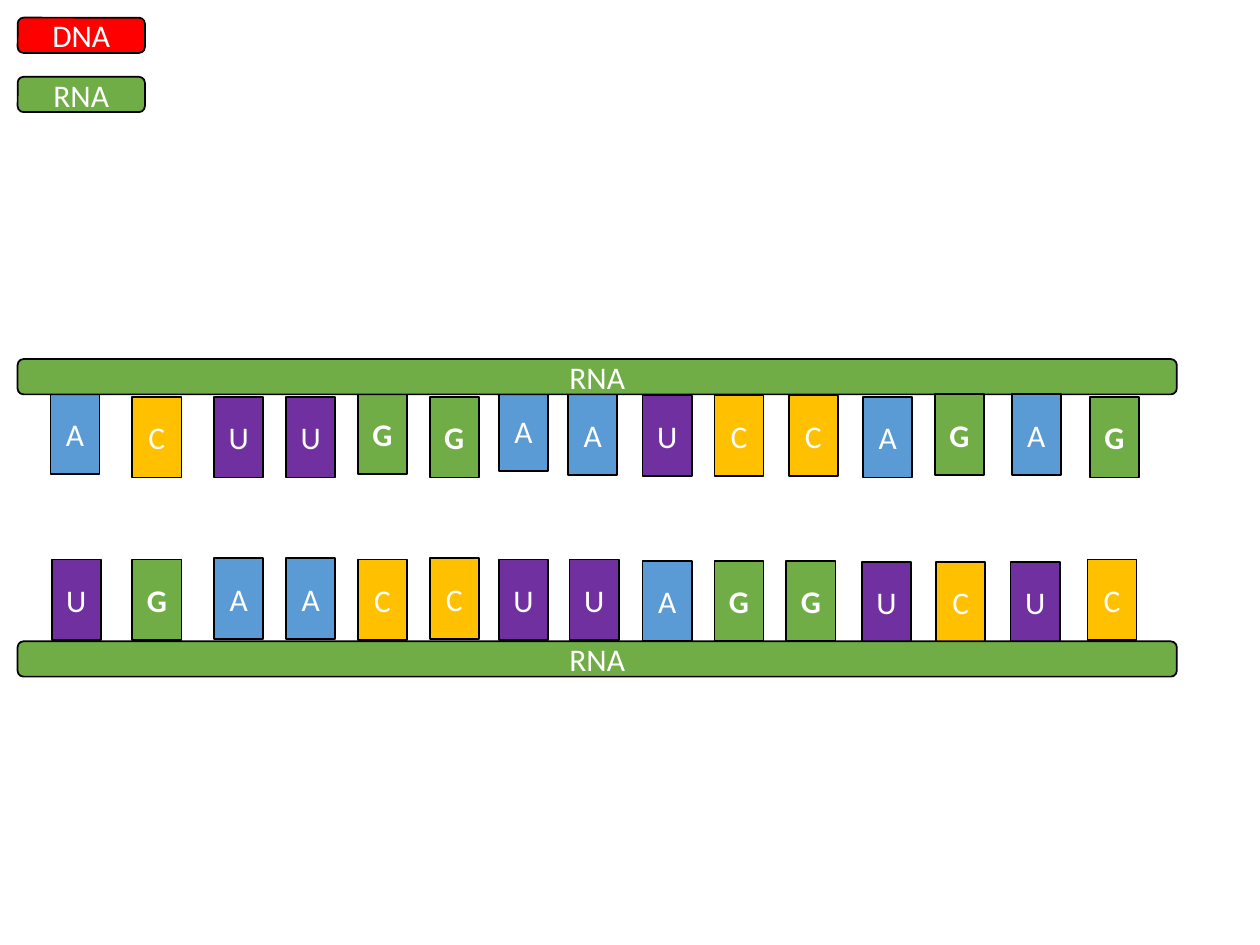
from typing import NamedTuple

from pptx import Presentation
from pptx.dml.color import RGBColor
from pptx.enum.shapes import MSO_SHAPE as Shape
from pptx.enum.text import MSO_ANCHOR as Anchor, PP_ALIGN as Align
from pptx.util import Inches, Pt

DNA_RED = "FF0000"
RNA_GREEN = "70AD47"
BASE_COLORS = {"A": "5B9BD5", "C": "FFC000", "G": RNA_GREEN, "U": "7030A0"}
BASE_WIDTH, BASE_HEIGHT = 0.39, 0.64
BAR_LEFT, BAR_HEIGHT = 0.14, 0.28
LABEL_WIDTH, STRAND_WIDTH = 1.01, 9.2


class Base(NamedTuple):
    letter: str
    left: float
    top: float


class Bar(NamedTuple):
    text: str
    top: float
    width: float
    color: str


LEGEND = [
    Bar("DNA", 0.14, LABEL_WIDTH, DNA_RED),
    Bar("RNA", 0.61, LABEL_WIDTH, RNA_GREEN),
]
STRANDS = [Bar("RNA", top, STRAND_WIDTH, RNA_GREEN) for top in (2.85, 5.09)]
LOWER_BASES = [
    Base("U", 0.41, 4.44), Base("G", 1.05, 4.44), Base("A", 1.7, 4.43),
    Base("A", 2.27, 4.43), Base("C", 2.84, 4.44), Base("C", 3.41, 4.43),
    Base("U", 3.96, 4.44), Base("U", 4.52, 4.44), Base("A", 5.1, 4.45),
    Base("G", 5.67, 4.45), Base("G", 6.24, 4.45), Base("U", 6.84, 4.46),
    Base("C", 7.43, 4.46), Base("U", 8.02, 4.46), Base("C", 8.63, 4.44),
]
UPPER_BASES_BEHIND = [
    Base("A", 0.4, 3.12), Base("C", 1.05, 3.15), Base("U", 1.7, 3.15),
    Base("U", 2.27, 3.15), Base("G", 2.84, 3.12), Base("G", 3.41, 3.15),
    Base("A", 3.96, 3.1), Base("A", 4.51, 3.13),
]
UPPER_BASES_IN_FRONT = [
    Base("U", 5.1, 3.14), Base("C", 5.67, 3.14), Base("C", 6.26, 3.14),
    Base("A", 6.85, 3.15), Base("G", 7.42, 3.13), Base("A", 8.03, 3.13),
    Base("G", 8.65, 3.15),
]


def rgb(color: str) -> RGBColor:
    return RGBColor.from_string(color)


def draw_box(page, kind, left: float, top: float, width: float, height: float,
             text: str, color: str, bold: bool = False) -> None:
    box = page.shapes.add_shape(
        kind, Inches(left), Inches(top), Inches(width), Inches(height))
    box.shadow.inherit = False
    box.fill.solid()
    box.fill.fore_color.rgb = rgb(color)
    box.line.color.rgb = rgb("000000")
    box.line.width = Pt(1)
    box.text_frame.vertical_anchor = Anchor.MIDDLE
    para = box.text_frame.paragraphs[0]
    para.text = text
    para.alignment = Align.CENTER
    para.font.name = "Calibri"
    para.font.size = Pt(18)
    para.font.bold = bold
    para.font.color.rgb = rgb("FFFFFF")


def draw_bars(page, bars: list[Bar]) -> None:
    for bar in bars:
        draw_box(page, Shape.ROUNDED_RECTANGLE, BAR_LEFT, bar.top, bar.width,
                 BAR_HEIGHT, bar.text, bar.color)


def draw_bases(page, bases: list[Base]) -> None:
    for base in bases:
        draw_box(page, Shape.RECTANGLE, base.left, base.top, BASE_WIDTH,
                 BASE_HEIGHT, base.letter, BASE_COLORS[base.letter],
                 bold=base.letter == "G")


def main() -> None:
    deck = Presentation()
    deck.slide_width = Inches(10)
    deck.slide_height = Inches(7.5)
    page = deck.slides.add_slide(deck.slide_layouts[6])
    draw_bars(page, LEGEND)
    draw_bases(page, LOWER_BASES + UPPER_BASES_BEHIND)
    draw_bars(page, STRANDS)
    draw_bases(page, UPPER_BASES_IN_FRONT)
    deck.save("out.pptx")


if __name__ == "__main__":
    main()
